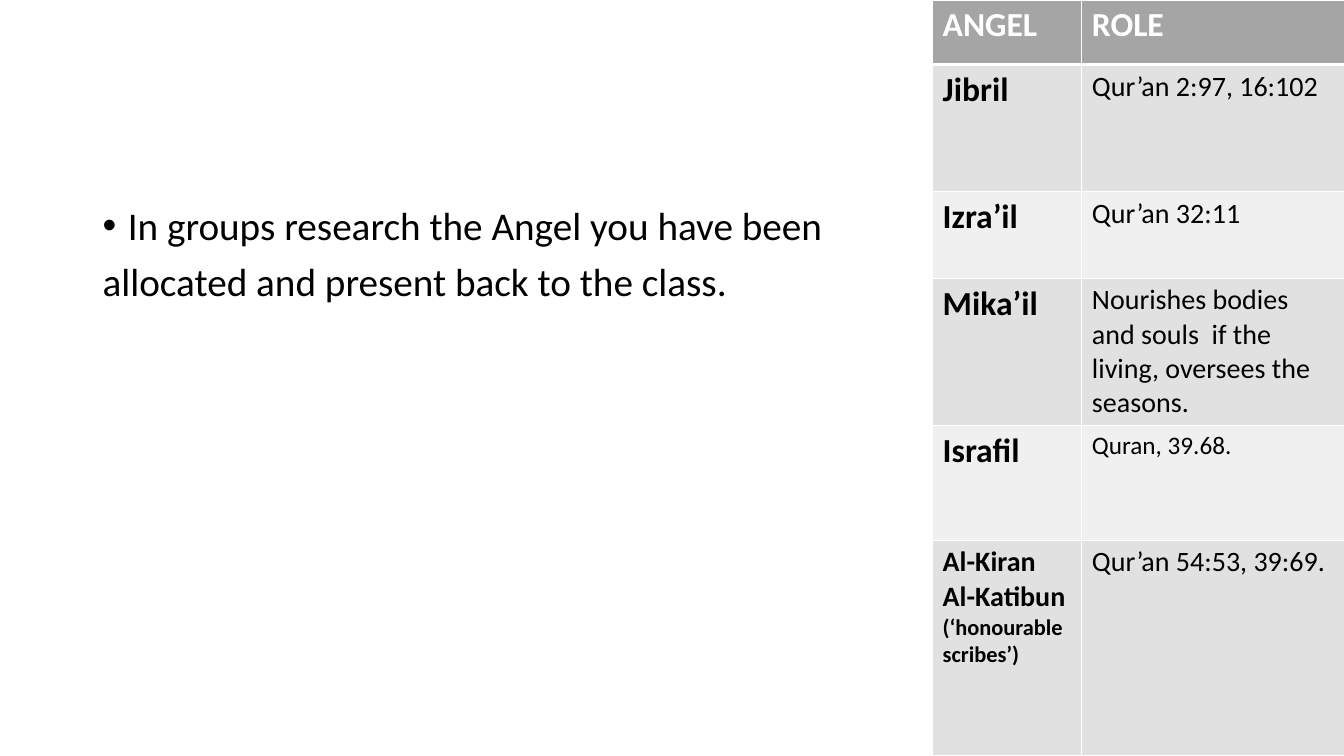
import pptx
import pptx.util
import pptx.dml.color
import pptx.oxml
import pptx.oxml.ns

WIDE, HIGH = 13.33, 7.5
INCH = pptx.util.Inches
NS = pptx.oxml.ns.nsdecls("a")


def color(code):
    return pptx.dml.color.RGBColor.from_string(code)


def write(para, text, size=24, bold=False, ink="000000"):
    run = para.add_run()
    run.text = text
    run.font.name = "Calibri"
    run.font.size = pptx.util.Pt(size)
    run.font.bold = bold
    run.font.color.rgb = color(ink)


deck = pptx.Presentation()
deck.slide_width, deck.slide_height = INCH(WIDE), INCH(HIGH)
slide = deck.slides.add_slide(deck.slide_layouts[6])

# Task text, with a bullet on its first line
box = slide.shapes.add_textbox(INCH(0.92), INCH(2), INCH(11.5), INCH(4.76))
frame = box.text_frame
frame.word_wrap = True
task = ["In groups research the Angel you have been",
        "allocated and present back to the class."]
for num, line in enumerate(task):
    para = frame.add_paragraph() if num else frame.paragraphs[0]
    para.line_spacing = 0.9
    para.space_before = pptx.util.Pt(10)
    write(para, line, size=28)
    if num == 0:
        props = para._p.get_or_add_pPr()
        props.set("marL", str(INCH(0.25)))
        props.set("indent", str(-INCH(0.25)))
        props.append(pptx.oxml.parse_xml(f'<a:buFont {NS} typeface="Arial"/>'))
        props.append(pptx.oxml.parse_xml(f'<a:buChar {NS} char="•"/>'))

# Angel table: row height, then lines of (text, size) for each cell
rows = [
    (0.64, [("ANGEL", 24)], [("ROLE", 24)]),
    (1.26, [("Jibril", 24)], [("Qur’an 2:97, 16:102", 20)]),
    (0.86, [("Izra’il", 24)], [("Qur’an 32:11", 20)]),
    (1.46, [("Mika’il", 24)],
     [("Nourishes bodies and souls  if the living, oversees the seasons.", 20)]),
    (1.14, [("Israfil", 24)], [("Quran, 39.68.", 18)]),
    (2.14, [("Al-Kiran Al-Katibun", 20), ("(‘honourable scribes’)", 16)],
     [("Qur’an 54:53, 39:69.", 20)]),
]
cols = [1.48, 2.61]
table = slide.shapes.add_table(len(rows), len(cols), INCH(9.25), 0,
                               INCH(sum(cols)), INCH(HIGH)).table
for col, width in enumerate(cols):
    table.columns[col].width = INCH(width)

for row, (height, *cells) in enumerate(rows):
    table.rows[row].height = INCH(height)
    head = row == 0
    for col, lines in enumerate(cells):
        cell = table.cell(row, col)
        cell.fill.solid()
        cell.fill.fore_color.rgb = color(
            "A5A5A5" if head else "E1E1E1" if row % 2 else "F0F0F0")
        for num, (text, size) in enumerate(lines):
            body = cell.text_frame
            para = body.add_paragraph() if num else body.paragraphs[0]
            write(para, text, size=size, bold=head or col == 0,
                  ink="FFFFFF" if head else "000000")

        # White borders, thicker below the header
        props = cell._tc.get_or_add_tcPr()
        for spot, side in enumerate("LRTB"):
            thick = (row, side) in [(0, "B"), (1, "T")]
            wide = pptx.util.Pt(3 if thick else 1)
            props.insert(spot, pptx.oxml.parse_xml(
                f'<a:ln{side} {NS} w="{wide}"><a:solidFill>'
                f'<a:srgbClr val="FFFFFF"/></a:solidFill></a:ln{side}>'))

deck.save("out.pptx")
